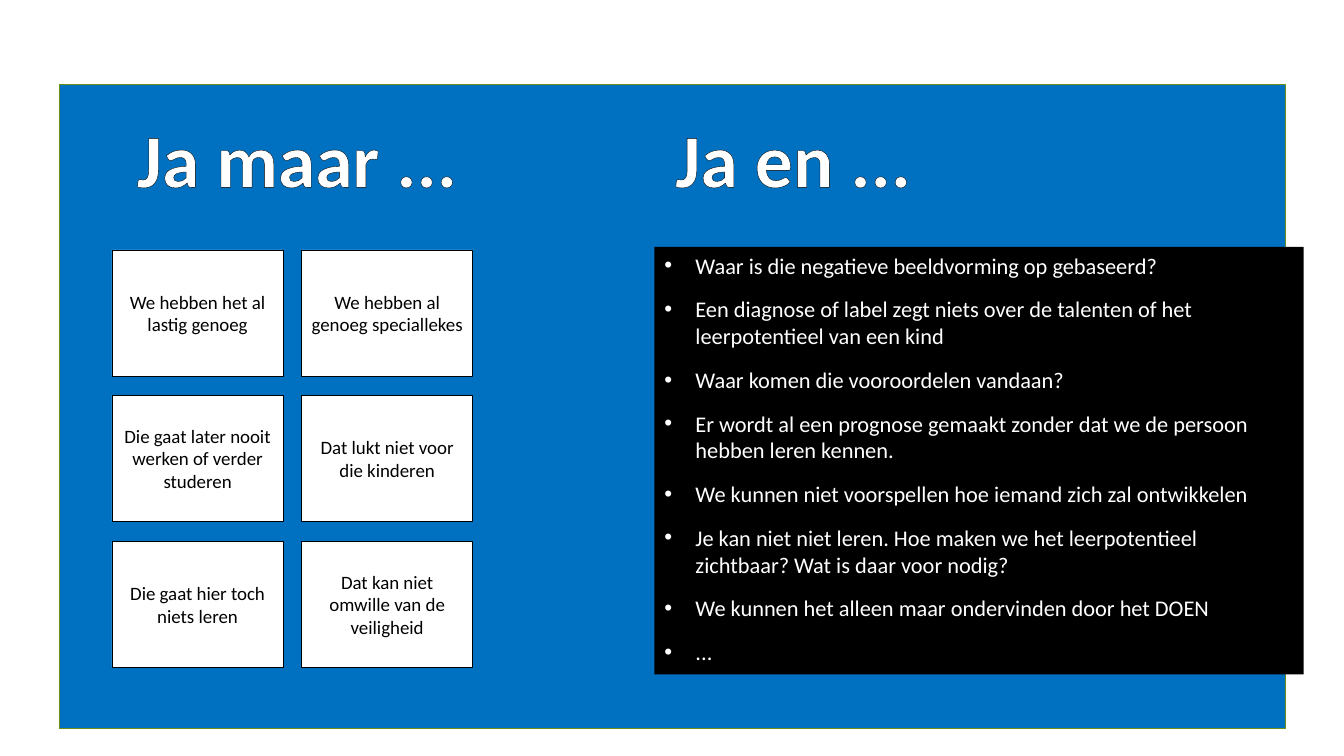
from lxml import etree
from pptx import Presentation
from pptx.dml.color import RGBColor
from pptx.enum.shapes import MSO_SHAPE
from pptx.enum.text import MSO_ANCHOR, PP_ALIGN
from pptx.oxml.ns import qn
from pptx.util import Pt

RECTANGLE = MSO_SHAPE.RECTANGLE
TOP, MIDDLE = MSO_ANCHOR.TOP, MSO_ANCHOR.MIDDLE
LEFT, CENTER = PP_ALIGN.LEFT, PP_ALIGN.CENTER

BLUE = RGBColor(0x00, 0x70, 0xC0)
GREEN = RGBColor(0x6D, 0x8E, 0x17)
WHITE = RGBColor(0xFF, 0xFF, 0xFF)
BLACK = RGBColor(0x00, 0x00, 0x00)

PX = 9144  # 100 px to the inch
FONT = "Calibri"
BULLET_INDENT = 31


def add_rectangle(page, left, top, width, height, fill, line=None, line_width=1):
    box = page.shapes.add_shape(
        RECTANGLE, left * PX, top * PX, width * PX, height * PX)
    box.shadow.inherit = False
    box.fill.solid()
    box.fill.fore_color.rgb = fill
    if line is None:
        box.line.fill.background()
    else:
        box.line.color.rgb = line
        box.line.width = Pt(line_width)
    return box


def write(box, lines, size, color, align=LEFT, anchor=TOP, bold=False,
          wrap=True, inset=10, gap=0, bullet=None, outline=None):
    frame = box.text_frame
    frame.word_wrap = wrap
    frame.vertical_anchor = anchor
    frame.margin_left = frame.margin_right = inset * PX
    for index, text in enumerate(lines):
        para = frame.add_paragraph() if index else frame.paragraphs[0]
        para.alignment = align
        if index and gap:
            para.space_before = Pt(gap)
        if bullet:
            properties = para._p.get_or_add_pPr()
            properties.set("marL", str(BULLET_INDENT * PX))
            properties.set("indent", str(-BULLET_INDENT * PX))
            etree.SubElement(properties, qn("a:buFont")).set("typeface", "Arial")
            etree.SubElement(properties, qn("a:buChar")).set("char", bullet)
        span = para.add_run()
        span.text = text
        span.font.name = FONT
        span.font.size = Pt(size)
        span.font.bold = bold
        span.font.color.rgb = color
        if outline is not None:
            stroke = etree.Element(qn("a:ln"), w=str(Pt(1)))
            paint = etree.SubElement(stroke, qn("a:solidFill"))
            etree.SubElement(paint, qn("a:srgbClr")).set("val", str(outline))
            span._r.get_or_add_rPr().insert(0, stroke)


deck = Presentation()
deck.slide_width, deck.slide_height = 1333 * PX, 750 * PX
page = deck.slides.add_slide(deck.slide_layouts[6])

# Blue background panel
add_rectangle(page, 59, 84, 1216, 639, BLUE, GREEN)

# Headings
for heading, left, width in (("Ja maar ...", 126, 341), ("Ja en ...", 660, 273)):
    box = page.shapes.add_textbox(left * PX, 106 * PX, width * PX, 101 * PX)
    write(box, [heading], 54, WHITE, bold=True, wrap=False, outline=BLACK)

# Grid of objections
objections = [
    ("We hebben het al lastig genoeg", "We hebben al genoeg speciallekes"),
    ("Die gaat later nooit werken of verder studeren",
     "Dat lukt niet voor die kinderen"),
    ("Die gaat hier toch niets leren", "Dat kan niet omwille van de veiligheid"),
]
for row, pair in enumerate(objections):
    for column, objection in enumerate(pair):
        card = add_rectangle(page, 111 + column * 188, 248 + row * 289 // 2,
                             170, 125, WHITE, BLACK, 0.5)
        write(card, [objection], 13.5, BLACK, align=CENTER, anchor=MIDDLE, inset=8)

# Answers on the black panel
answers = [
    "Waar is die negatieve beeldvorming op gebaseerd?",
    "Een diagnose of label zegt niets over de talenten of het "
    "leerpotentieel van een kind",
    "Waar komen die vooroordelen vandaan?",
    "Er wordt al een prognose gemaakt zonder dat we de persoon "
    "hebben leren kennen.",
    "We kunnen niet voorspellen hoe iemand zich zal ontwikkelen",
    "Je kan niet niet leren. Hoe maken we het leerpotentieel "
    "zichtbaar? Wat is daar voor nodig?",
    "We kunnen het alleen maar ondervinden door het DOEN",
    "...",
]
panel = add_rectangle(page, 649, 245, 644, 424, BLACK)
write(panel, answers, 16, WHITE, gap=12, bullet="•")

deck.save("out.pptx")
